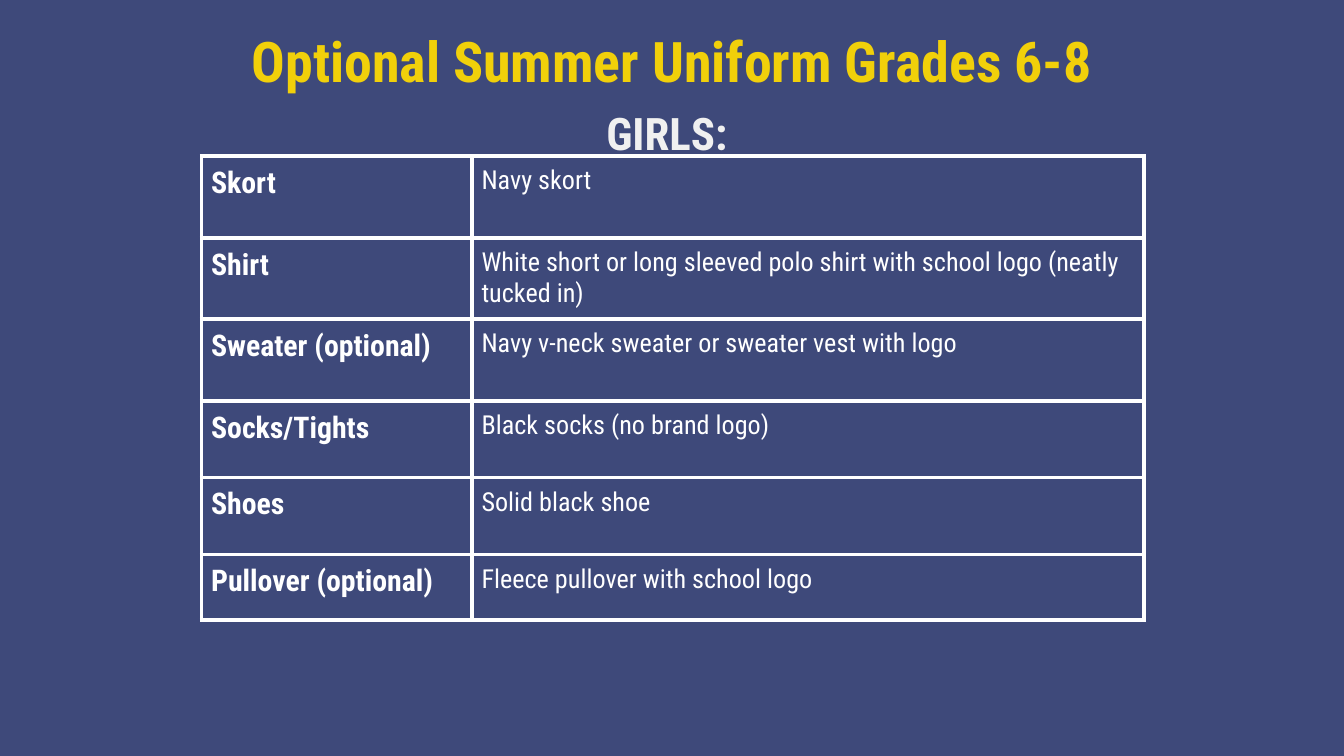
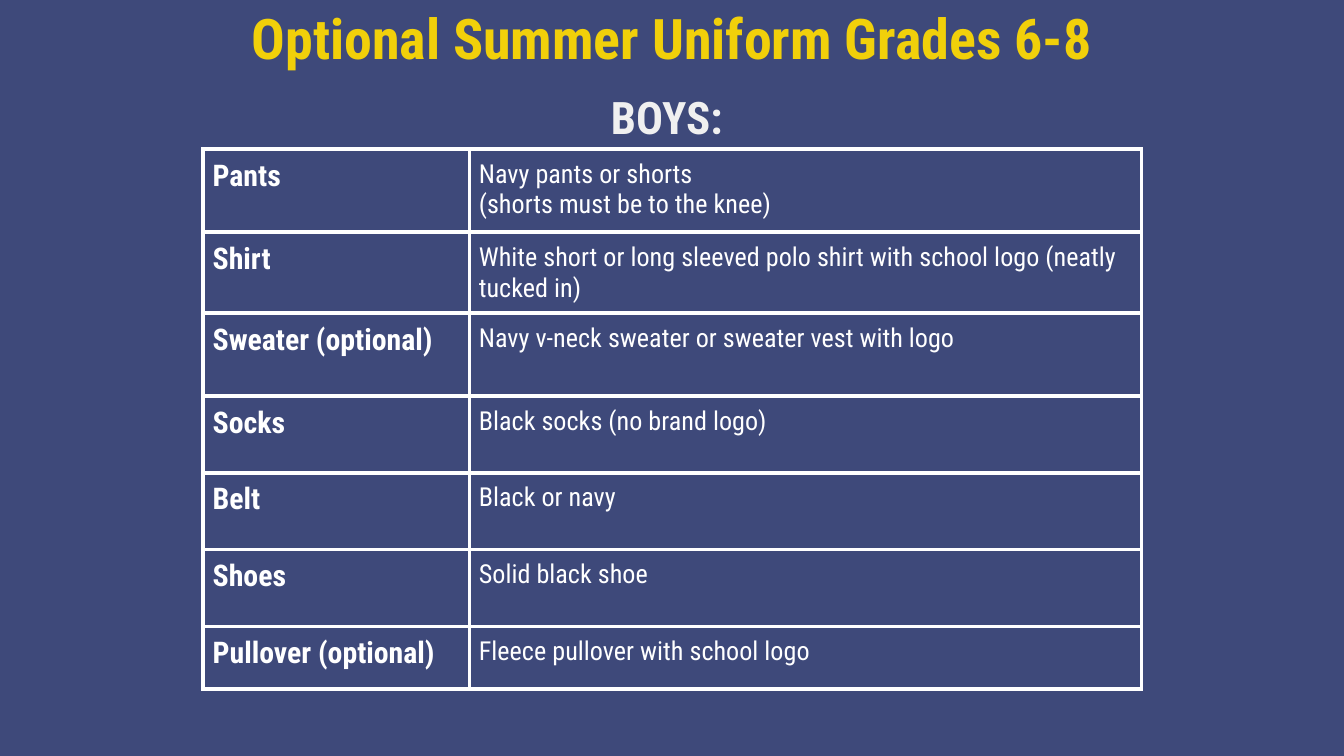
from pptx import Presentation
from pptx import util as u
from pptx.dml.color import RGBColor
from pptx.enum import text
from pptx.oxml import parse_xml
from pptx.oxml.ns import nsdecls

COLORS = {
    "background": "3E497A",
    "title": "F1D00A",
    "heading": "F0F0F0",
    "table": "FFFFFF",
}
FONT = "Roboto Condensed"
TITLE = "Optional Summer Uniform Grades 6-8"
SLIDE_WIDTH = 25.4
DETAIL_WIDTH = 12.7
BORDER_WIDTH = u.Pt(2.25)

SHIRT = ("Shirt", "White short or long sleeved polo shirt with school logo (neatly tucked in)", 1.45)
SHOES = ("Shoes", "Solid black shoe", 1.45)
SWEATER = ("Sweater (optional)", "Navy v-neck sweater or sweater vest with logo")
SOCKS = "Black socks (no brand logo)"
PULLOVER = ("Pullover (optional)", "Fleece pullover with school logo")

GIRLS = [
    ("Skort", "Navy skort", 1.55),
    SHIRT,
    (*SWEATER, 1.55),
    ("Socks/Tights", SOCKS, 1.45),
    SHOES,
    (*PULLOVER, 1.24),
]
BOYS = [
    ("Pants", "Navy pants or shorts\n(shorts must be to the knee)", 1.57),
    SHIRT,
    (*SWEATER, 1.57),
    ("Socks", SOCKS, 1.45),
    ("Belt", "Black or navy", 1.45),
    SHOES,
    (*PULLOVER, 1.19),
]


def write_text(frame, content, size, color, bold=False, align=None, line_spacing=None, space_after=None):
    frame.text = content
    for paragraph in frame.paragraphs:
        paragraph.alignment = align
        paragraph.line_spacing = line_spacing
        paragraph.space_after = space_after
        for run in paragraph.runs:
            run.font.name = FONT
            run.font.size = u.Pt(size)
            run.font.bold = bold
            run.font.color.rgb = RGBColor.from_string(COLORS[color])


def set_margins(target, margin):
    target.margin_left = target.margin_right = u.Cm(margin)
    target.margin_top = target.margin_bottom = u.Cm(margin)


def format_centered(shape, content, size, color, **options):
    frame = shape.text_frame
    frame.word_wrap = True
    frame.auto_size = text.MSO_AUTO_SIZE.NONE
    frame.vertical_anchor = text.MSO_ANCHOR.TOP
    set_margins(frame, 0.25)
    write_text(frame, content, size, color, bold=True, align=text.PP_ALIGN.CENTER, **options)


def add_title(slide, top):
    title = slide.shapes.title
    title.left, title.top = 0, u.Cm(top)
    title.width, title.height = u.Cm(SLIDE_WIDTH), u.Cm(1.59)
    format_centered(title, TITLE, 30, "title")


def add_heading(slide, content, top, width, height, space_after=None):
    left = (SLIDE_WIDTH - width) / 2
    box = slide.shapes.add_textbox(u.Cm(left), u.Cm(top), u.Cm(width), u.Cm(height))
    format_centered(box, content, 24, "heading", line_spacing=1.15, space_after=space_after)


def add_borders(cell):
    properties = cell._tc.get_or_add_tcPr()
    for index, side in enumerate("LRTB"):
        border = parse_xml(
            f'<a:ln{side} {nsdecls("a")} w="{BORDER_WIDTH}"><a:solidFill>'
            f'<a:srgbClr val="{COLORS["table"]}"/></a:solidFill></a:ln{side}>'
        )
        properties.insert(index, border)


def add_cell(cell, content, size, bold):
    cell.fill.background()
    set_margins(cell, 0.18)
    write_text(cell.text_frame, content, size, "table", bold=bold)
    add_borders(cell)


def add_uniform_table(slide, items, left, top, item_width):
    widths = (item_width, DETAIL_WIDTH)
    height = sum(row_height for _, _, row_height in items)
    frame = slide.shapes.add_table(
        len(items), 2, u.Cm(left), u.Cm(top), u.Cm(sum(widths)), u.Cm(height)
    )
    table = frame.table
    table.first_row = table.horz_banding = False
    for column, width in zip(table.columns, widths):
        column.width = u.Cm(width)
    for index, (item, detail, row_height) in enumerate(items):
        table.rows[index].height = u.Cm(row_height)
        add_cell(table.cell(index, 0), item, 16, True)
        add_cell(table.cell(index, 1), detail, 14, False)


def add_slide(presentation, title_top):
    slide = presentation.slides.add_slide(presentation.slide_layouts[5])
    add_title(slide, title_top)
    return slide


def main():
    presentation = Presentation()
    presentation.slide_width = u.Cm(SLIDE_WIDTH)
    presentation.slide_height = u.Cm(14.29)
    fill = presentation.slide_master.background.fill
    fill.solid()
    fill.fore_color.rgb = RGBColor.from_string(COLORS["background"])

    girls = add_slide(presentation, 0.25)
    add_heading(girls, "GIRLS: ", 1.6, 12.85, 1.19, space_after=u.Pt(12))
    add_uniform_table(girls, GIRLS, 3.81, 2.95, 5.11)

    boys = add_slide(presentation, -0.18)
    add_heading(boys, "BOYS: ", 1.3, 13.16, 1.42)
    add_uniform_table(boys, BOYS, 3.84, 2.82, 5.03)

    presentation.save("out.pptx")


if __name__ == "__main__":
    main()
